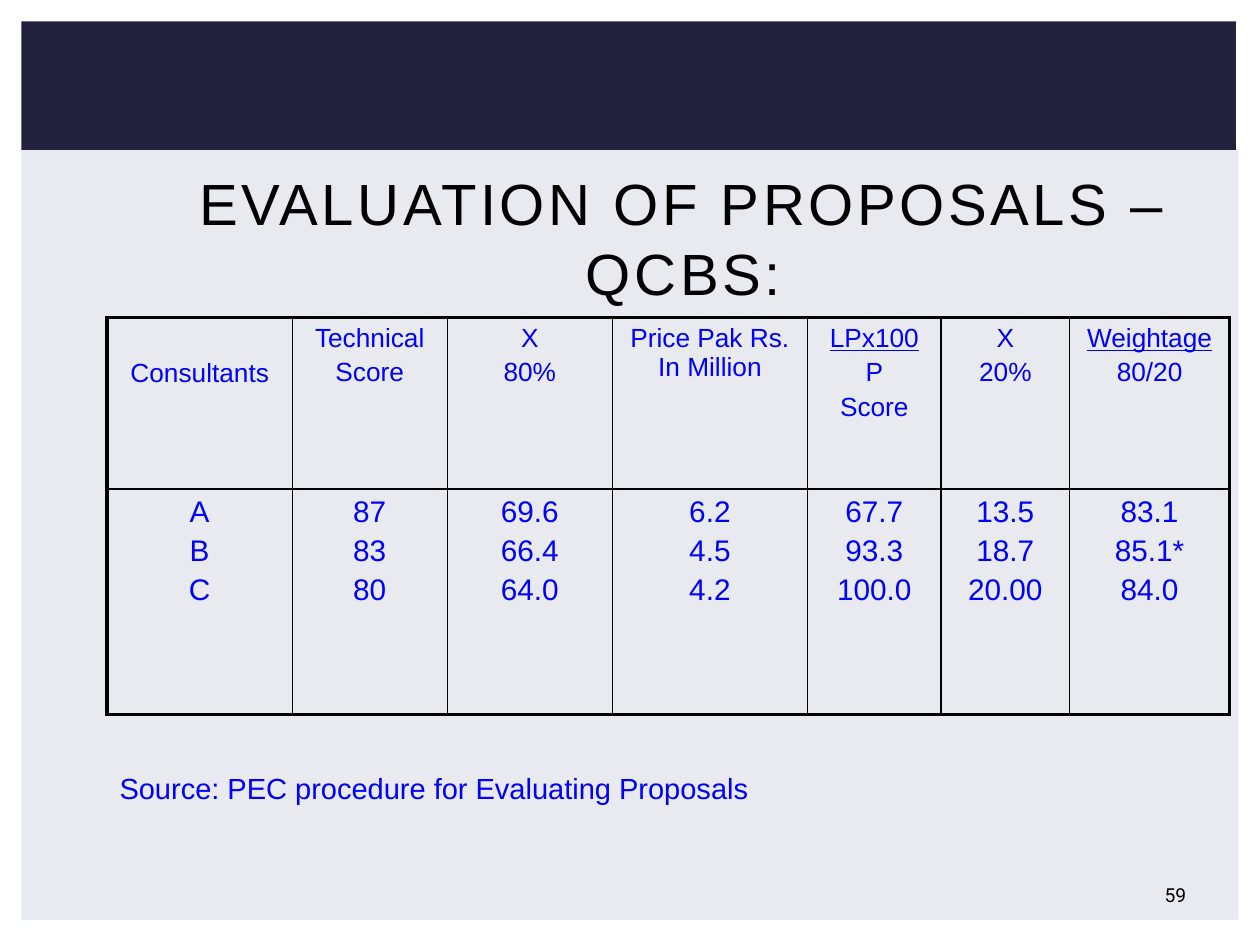
from dataclasses import dataclass

from lxml import etree
from pptx import Presentation
from pptx import util as u
from pptx.dml.color import RGBColor
from pptx.enum import shapes, text
from pptx.oxml.ns import qn

HUES = {"pale": "E9EAF0", "navy": "24213E", "black": "000000", "blue": "0000FF"}
ALIGN = text.PP_ALIGN
ANCHOR = text.MSO_ANCHOR


@dataclass
class Box:
    left: float
    top: float
    width: float
    height: float

    def place(self) -> tuple:
        return tuple(u.Inches(n) for n in (self.left, self.top, self.width, self.height))


@dataclass
class Panel:
    box: Box
    hue: str


@dataclass
class Label:
    box: Box
    words: str
    style: dict
    hue: str
    align: int
    anchor: int
    track: int = 0


@dataclass
class Column:
    width: float
    head: list
    marks: list
    under: bool = False
    drop: float = 0.05


PANELS = [
    Panel(Box(0.17, 1.18, 9.66, 6.12), "pale"),
    Panel(Box(0.17, 0.17, 9.64, 1.02), "navy"),
]
LABELS = [
    Label(Box(1.2, 1.5, 8.45, 0.77), "EVALUATION OF PROPOSALS – QCBS:",
          {"name": "Arial", "size": u.Pt(33.2)}, "black", ALIGN.CENTER, ANCHOR.MIDDLE, 200),
    Label(Box(9.01, 6.95, 0.64, 0.3), "59",
          {"name": "Roboto", "size": u.Pt(11)}, "black", ALIGN.CENTER, ANCHOR.MIDDLE),
    Label(Box(0.85, 5.98, 8.52, 0.46), "Source: PEC procedure for Evaluating Proposals",
          {"name": "Arial", "size": u.Pt(16.6)}, "blue", ALIGN.LEFT, ANCHOR.BOTTOM),
]
COLUMNS = [
    Column(1.47, ["Consultants"], ["A", "B", "C"], drop=0.33),
    Column(1.23, ["Technical", "Score"], ["87", "83", "80"]),
    Column(1.31, ["X", "80%"], ["69.6", "66.4", "64.0"]),
    Column(1.55, ["Price Pak Rs. In Million"], ["6.2", "4.5", "4.2"]),
    Column(1.06, ["LPx100", "P", "Score"], ["67.7", "93.3", "100.0"], under=True),
    Column(1.02, ["X", "20%"], ["13.5", "18.7", "20.00"]),
    Column(1.27, ["Weightage", "80/20"], ["83.1", "85.1*", "84.0"], under=True),
]
ROWS = [1.36, 1.79]
SIZES = [15, 17]


def dress(run, style: dict, hue: str) -> None:
    for key, value in style.items():
        setattr(run.font, key, value)
    run.font.color.rgb = RGBColor.from_string(HUES[hue])


def panel(slide, item: Panel) -> None:
    shape = slide.shapes.add_shape(shapes.MSO_SHAPE.RECTANGLE, *item.box.place())
    shape.shadow.inherit = False
    shape.fill.solid()
    shape.fill.fore_color.rgb = RGBColor.from_string(HUES[item.hue])
    shape.line.fill.background()


def label(slide, item: Label) -> None:
    frame = slide.shapes.add_textbox(*item.box.place()).text_frame
    frame.word_wrap = True
    frame.vertical_anchor = item.anchor
    para = frame.paragraphs[0]
    para.alignment = item.align
    run = para.add_run()
    run.text = item.words
    dress(run, item.style, item.hue)
    if item.track:
        run._r.get_or_add_rPr().set("spc", str(item.track))


def border(cell, edges: dict) -> None:
    props = cell._tc.get_or_add_tcPr()
    for side, thick in edges.items():
        line = etree.SubElement(props, qn(f"a:ln{side}"), w=str(u.Pt(thick)))
        fill = etree.SubElement(line, qn("a:solidFill"))
        etree.SubElement(fill, qn("a:srgbClr"), val=HUES["black"])


def write(cell, lines: list, size: int, under: bool) -> None:
    frame = cell.text_frame
    for i, words in enumerate(lines):
        para = frame.add_paragraph() if i else frame.paragraphs[0]
        para.alignment = ALIGN.CENTER
        para.space_before = u.Pt(size * 0.2)
        run = para.add_run()
        run.text = words
        style = {"name": "Arial", "size": u.Pt(size), "underline": under and i == 0}
        dress(run, style, "blue")


def grid(slide, box: Box) -> None:
    table = slide.shapes.add_table(len(ROWS), len(COLUMNS), *box.place()).table
    table.first_row = table.horz_banding = False
    for row, tall in zip(table.rows, ROWS):
        row.height = u.Inches(tall)
    for c, col in enumerate(COLUMNS):
        table.columns[c].width = u.Inches(col.width)
        for r, lines in enumerate((col.head, col.marks)):
            cell = table.cell(r, c)
            outer = {"L": c == 0, "R": c == len(COLUMNS) - 1,
                     "T": r == 0, "B": r == len(ROWS) - 1}
            border(cell, {side: 2.25 if out else 1 for side, out in outer.items()})
            cell.fill.background()
            cell.margin_left = cell.margin_right = u.Inches(0.09)
            cell.margin_top = u.Inches(0.05 if r else col.drop)
            cell.margin_bottom = u.Inches(0.05)
            write(cell, lines, SIZES[r], col.under and r == 0)


def main() -> None:
    deck = Presentation()
    deck.slide_width, deck.slide_height = u.Inches(10), u.Inches(7.5)
    slide = deck.slides.add_slide(deck.slide_layouts[6])
    for item in PANELS:
        panel(slide, item)
    grid(slide, Box(0.85, 2.52, 8.92, sum(ROWS)))
    for item in LABELS:
        label(slide, item)
    deck.save("out.pptx")


if __name__ == "__main__":
    main()
